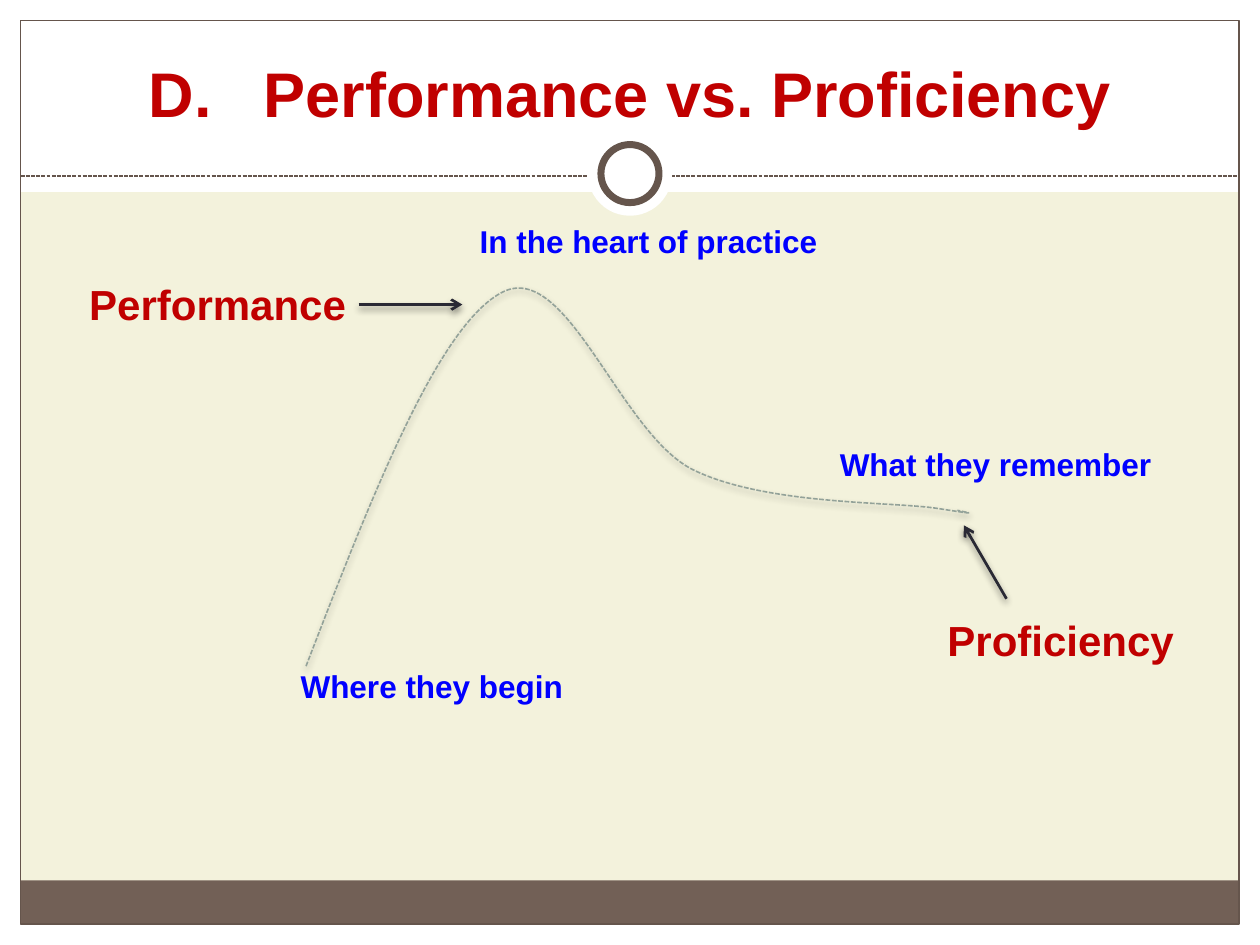
from lxml import etree
from pptx import Presentation
from pptx.dml.color import RGBColor
from pptx.enum.dml import MSO_LINE
from pptx.enum.shapes import MSO_CONNECTOR, MSO_SHAPE
from pptx.enum.text import MSO_ANCHOR, MSO_AUTO_SIZE, PP_ALIGN
from pptx.oxml.ns import qn
from pptx.util import Cm, Pt

RECT, OVAL = MSO_SHAPE.RECTANGLE, MSO_SHAPE.OVAL
STRAIGHT = MSO_CONNECTOR.STRAIGHT
SYS_DASH = MSO_LINE.SQUARE_DOT
LEFT, CENTER = PP_ALIGN.LEFT, PP_ALIGN.CENTER
TOP, BOTTOM = MSO_ANCHOR.TOP, MSO_ANCHOR.BOTTOM
NO_FIT, GROW = MSO_AUTO_SIZE.NONE, MSO_AUTO_SIZE.SHAPE_TO_FIT_TEXT

WIDTH, HEIGHT = 25.4, 19.05
MARGIN = 0.42
WHITE, CREAM, BROWN, BAR = "FFFFFF", "F3F2DC", "65554C", "726056"
RED, BLUE, DARK, SAGE = "C00000", "0000FF", "292934", "93A299"


def rgb(value):
    return RGBColor.from_string(value)


class SlideBuilder:
    font = "Arial"

    def __init__(self, slide):
        self.slide = slide
        self.shapes = slide.shapes

    def background(self, color):
        fill = self.slide.background.fill
        fill.solid()
        fill.fore_color.rgb = rgb(color)

    def stroke(self, sp, color, width, dash=None):
        sp.line.color.rgb = rgb(color)
        for name, value in {"width": Pt(width), "dash_style": dash}.items():
            setattr(sp.line, name, value)

    def effects(self, sp, opacity=None):
        """Replace the theme shadow by none, or by a soft one below."""
        effects = etree.SubElement(sp._element.spPr, qn("a:effectLst"))
        if opacity:
            shadow = etree.SubElement(effects, qn("a:outerShdw"), blurRad=str(Pt(4)),
                                      dist=str(Pt(2)), dir="5400000", rotWithShape="0")
            color = etree.SubElement(shadow, qn("a:srgbClr"), val="000000")
            etree.SubElement(color, qn("a:alpha"), val=str(opacity * 1000))

    def shape(self, kind, x, y, w, h, fill=None, line=None):
        sp = self.shapes.add_shape(kind, Cm(x), Cm(y), Cm(w), Cm(h))
        sp.shadow.inherit = False
        if fill:
            sp.fill.solid()
            sp.fill.fore_color.rgb = rgb(fill)
        else:
            sp.fill.background()
        if line:
            self.stroke(sp, *line)
        else:
            sp.line.fill.background()

    def line(self, x1, y1, x2, y2, color, width, dash=None, arrow=False):
        sp = self.shapes.add_connector(STRAIGHT, Cm(x1), Cm(y1), Cm(x2), Cm(y2))
        self.stroke(sp, color, width, dash)
        if arrow:
            etree.SubElement(sp.line._get_or_add_ln(), qn("a:tailEnd"), type="arrow")
        self.effects(sp, 45 if arrow else None)

    def curve(self, x, y, w, h, start, segments, color, width):
        """Open outline of cubic segments, framed by the given box."""
        builder = self.shapes.build_freeform(Cm(x), Cm(y))
        builder.add_line_segments([(Cm(x + w), Cm(y + h))], close=False)
        sp = builder.convert_to_shape()
        outline = sp._element.spPr.find(".//" + qn("a:path"))
        for step in list(outline):
            outline.remove(step)
        for tag, points in [("a:moveTo", [start])] + [("a:cubicBezTo", s) for s in segments]:
            step = etree.SubElement(outline, qn(tag))
            for px, py in points:
                etree.SubElement(step, qn("a:pt"), x=str(Cm(px) - Cm(x)),
                                 y=str(Cm(py) - Cm(y)))
        sp.fill.background()
        self.stroke(sp, color, width, SYS_DASH)
        self.effects(sp, 35)

    def text(self, lines, x, y, w, h, size, color, align=LEFT, anchor=TOP,
             wrap=True, fit=NO_FIT, gap=0):
        """Each line is a pair of wording and left indent."""
        tf = self.shapes.add_textbox(Cm(x), Cm(y), Cm(w), Cm(h)).text_frame
        frame = {"word_wrap": wrap, "auto_size": fit, "vertical_anchor": anchor}
        for name, value in frame.items():
            setattr(tf, name, value)
        for i, (wording, indent) in enumerate(lines):
            p = tf.add_paragraph() if i else tf.paragraphs[0]
            p.alignment = align
            if indent:
                p._p.get_or_add_pPr().set("marL", str(Cm(indent)))
            if i:
                p.space_before = Pt(gap)
            r = p.add_run()
            r.text = wording
            r.font.color.rgb = rgb(color)
            for name, value in {"name": self.font, "size": Pt(size), "bold": True}.items():
                setattr(r.font, name, value)


def main():
    prs = Presentation()
    prs.slide_width, prs.slide_height = Cm(WIDTH), Cm(HEIGHT)
    s = SlideBuilder(prs.slides.add_slide(prs.slide_layouts[6]))
    s.background(CREAM)

    # White margins and header
    inner_w, inner_h = WIDTH - 2 * MARGIN, HEIGHT - 2 * MARGIN
    for box in ((0, HEIGHT - MARGIN, WIDTH, MARGIN), (0, 0, WIDTH, 3.87),
                (0, 0, MARGIN, HEIGHT), (WIDTH - MARGIN, 0, MARGIN, HEIGHT)):
        s.shape(RECT, *box, fill=WHITE)

    # Footer bar, frame and header rule
    s.shape(RECT, MARGIN, 17.75, inner_w, 0.87, fill=BAR)
    s.shape(RECT, MARGIN, MARGIN, inner_w, inner_h, line=(BROWN, 0.75))
    s.line(MARGIN, 3.55, WIDTH - MARGIN, 3.55, BROWN, 0.75, SYS_DASH)

    # Ring on the rule
    for size, line in ((1.7, None), (1.17, (BROWN, 4))):
        s.shape(OVAL, (WIDTH - size) / 2, 3.5 - size / 2, size, size, WHITE, line)

    # Title
    s.text([("D.   Performance vs. Proficiency", 0)], 0.85, 0.63, 23.7, 2.12, 36, RED,
           CENTER, BOTTOM)

    # Stages of learning
    s.text([("In the heart of practice", 7.9),
            ("What they remember", 15.16),
            ("Where they begin", 4.29)],
           1.52, 4.36, 22.35, 12.06, 18, BLUE, gap=105.5)

    # Learning curve
    s.curve(6.17, 5.82, 13.36, 7.61, (6.17, 13.43), [
        ((7.5, 9.98), (8.84, 6.55), (10.13, 5.89)),
        ((11.43, 5.23), (12.5, 8.74), (13.97, 9.47)),
        ((15.44, 10.19), (18.01, 10.11), (18.9, 10.25)),
        ((19.79, 10.39), (19.55, 10.34), (19.3, 10.29)),
    ], SAGE, 0.9)

    # Measures and their arrows
    for label, x, y, w in (("Performance", 1.55, 5.49, 5.74),
                           ("Proficiency", 18.85, 12.27, 5.13)):
        s.text([(label, 0)], x, y, w, 1.27, 24, RED, wrap=False, fit=GROW)
    for arrow in ((7.23, 6.14, 9.32, 6.14), (20.29, 12.07, 19.43, 10.59)):
        s.line(*arrow, DARK, 1.57, arrow=True)

    prs.save("out.pptx")


if __name__ == "__main__":
    main()
